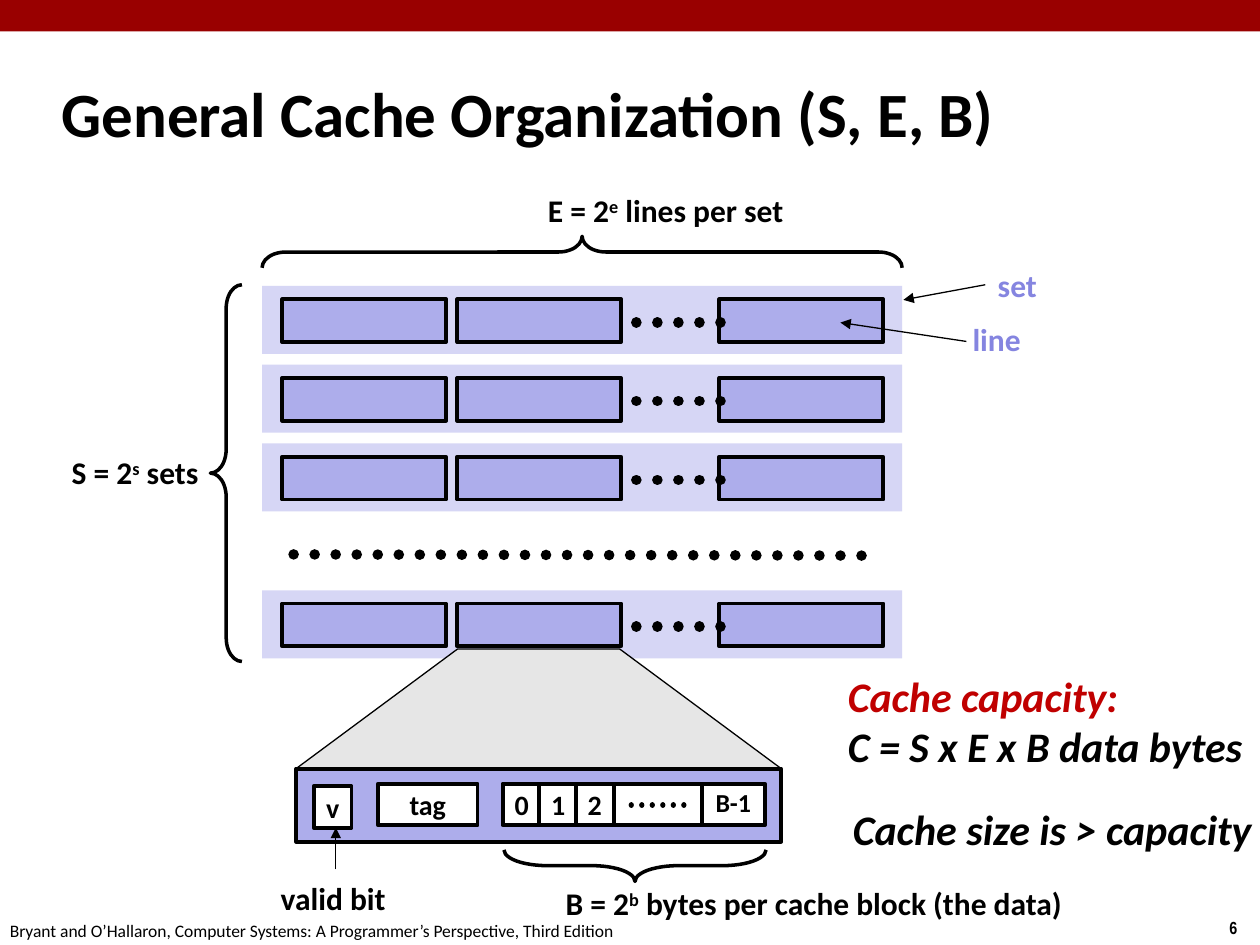
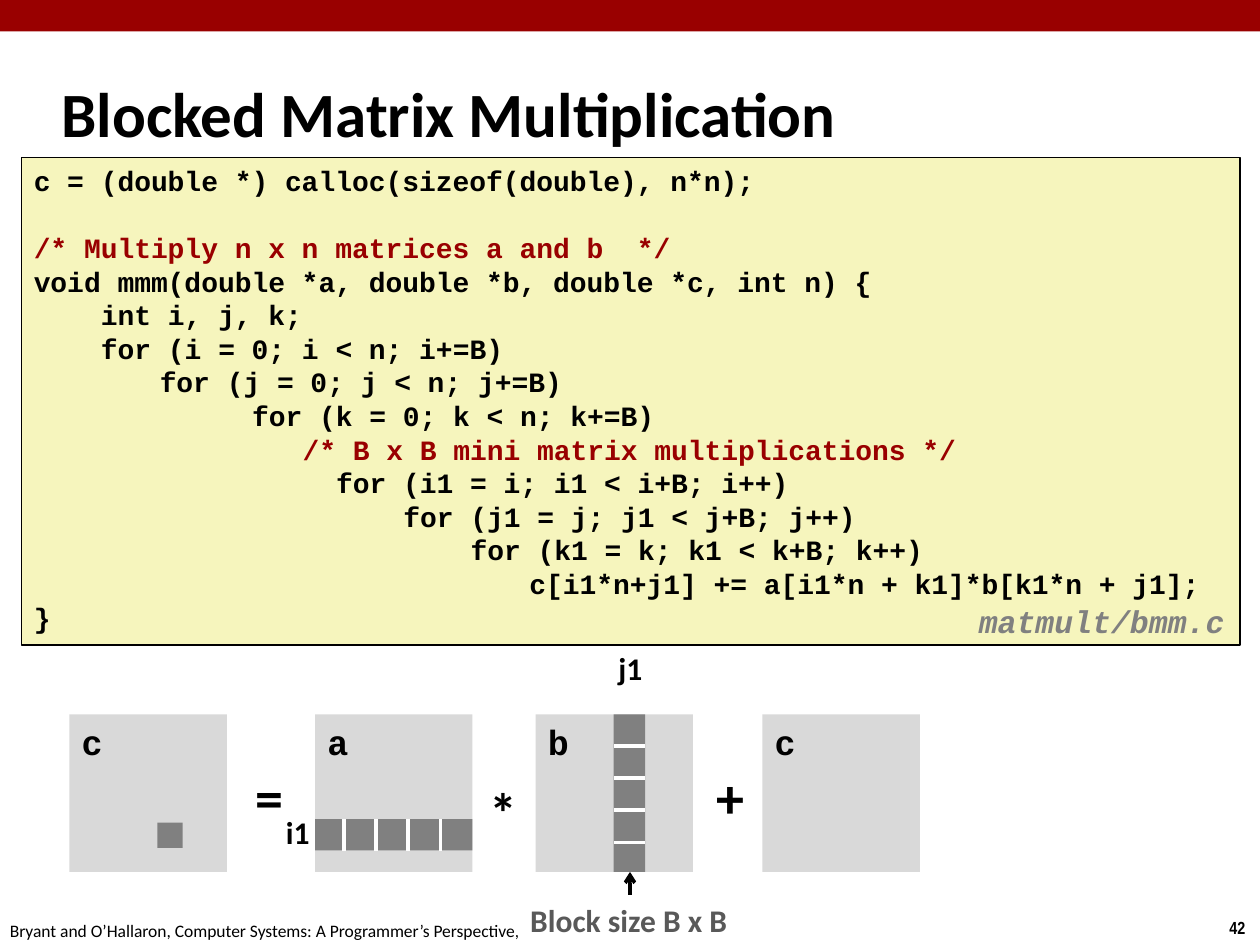
from collections import namedtuple

from lxml.etree import SubElement
from pptx import Presentation
from pptx.dml.color import RGBColor
from pptx.enum.dml import MSO_LINE
from pptx.enum.shapes import MSO_CONNECTOR, MSO_SHAPE
from pptx.enum.text import MSO_ANCHOR, MSO_AUTO_SIZE, PP_ALIGN
from pptx.oxml.ns import qn
from pptx.util import Inches, Pt

COLS, ROWS = 100, 75
WIDE, HIGH = Inches(10), Inches(7.5)
COL, ROW = WIDE // COLS, HIGH // ROWS
BODY, MONO, THIN = "Calibri", "Courier New", "Arial Narrow"
FOOT = ("Bryant and O’Hallaron, Computer Systems: "
        "A Programmer’s Perspective, Third Edition")
INK = {
    "black": "000000", "white": "FFFFFF", "band": "990000", "red": "C00000",
    "set": "D6D6F5", "line": "ADADEB", "name": "8585E0", "zoom": "E6E6E6",
    "code": "F6F5BD", "pale": "D9D9D9", "gray": "808080", "note": "595959",
}
CHAR = 4 / 3  # columns per character of 16 point code
CODE = [  # indent in characters, text, colour
    (0, "c = (double *) calloc(sizeof(double), n*n);", "black"),
    (0, "/* Multiply n x n matrices a and b  */", "band"),
    (0, "void mmm(double *a, double *b, double *c, int n) {", "black"),
    (4, "int i, j, k;", "black"),
    (4, "for (i = 0; i < n; i+=B)", "black"),
    (7.5, "for (j = 0; j < n; j+=B)", "black"),
    (13, "for (k = 0; k < n; k+=B)", "black"),
    (16, "/* B x B mini matrix multiplications */", "band"),
    (18, "for (i1 = i; i1 < i+B; i++)", "black"),
    (22, "for (j1 = j; j1 < j+B; j++)", "black"),
    (26, "for (k1 = k; k1 < k+B; k++)", "black"),
    (29.5, "c[i1*n+j1] += a[i1*n + k1]*b[k1*n + j1];", "black"),
    (0, "}", "black"),
]


class Box(namedtuple("Box", "x y w h")):
    """A region in grid columns and rows."""

    def area(self, x, y, w, h):
        """Give a box placed from this one's top left corner."""
        return Box(self.x + x, self.y + y, w, h)

    def emu(self):
        return (round(self.x * COL), round(self.y * ROW),
                round(self.w * COL), round(self.h * ROW))


PAGE = Box(0, 0, COLS, ROWS)


def ink(name):
    return RGBColor.from_string(INK[name])


def write(frame, text, size, color="black", face=BODY, bold=True, slant=False):
    """Fill a frame; a caret opens and closes a superscript."""
    for i, line in enumerate(text.split("\n")):
        para = frame.paragraphs[0] if i == 0 else frame.add_paragraph()
        font = para.font
        font.name, font.size = face, Pt(size)
        font.bold, font.italic = bold, slant
        font.color.rgb = ink(color)
        for k, piece in enumerate(line.split("^")):
            run = para.add_run()
            run.text = piece
            if k % 2:
                run.font._element.set("baseline", "30000")


def label(slide, box, text, size=18, color="black", fill=None, **style):
    """Add a text box that grows with its unwrapped text."""
    shape = slide.shapes.add_textbox(*box.emu())
    if fill:
        shape.fill.solid()
        shape.fill.fore_color.rgb = ink(fill)
    frame = shape.text_frame
    frame.word_wrap = False
    frame.auto_size = MSO_AUTO_SIZE.SHAPE_TO_FIT_TEXT
    write(frame, text, size, color, **style)
    return frame


def block(slide, box, fill=None, edge=0, kind=MSO_SHAPE.RECTANGLE):
    shape = slide.shapes.add_shape(kind, *box.emu())
    shape.shadow.inherit = False
    if fill:
        shape.fill.solid()
        shape.fill.fore_color.rgb = ink(fill)
    else:
        shape.fill.background()
    if edge:
        shape.line.color.rgb = ink("black")
        shape.line.width = Pt(edge)
    else:
        shape.line.fill.background()
    return shape


def cell(slide, box, text, size=16):
    """Add a white field with centred text."""
    frame = block(slide, box, "white", 2.25).text_frame
    frame.word_wrap = False
    frame.vertical_anchor = MSO_ANCHOR.MIDDLE
    write(frame, text, size)
    frame.paragraphs[0].alignment = PP_ALIGN.CENTER
    return frame


def brace(slide, box, turn=0, bend=0.75):
    """Add a brace that fills the box after its turn."""
    if turn:
        x, y, w, h = box
        box = Box(x + (w - h) / 2, y + (h - w) / 2, h, w)
    shape = block(slide, box, None, 2, MSO_SHAPE.LEFT_BRACE)
    shape.adjustments[0] = bend
    shape.rotation = turn


def rule(slide, start, end, width, color="black", dots=False, tip=None):
    """Add a line, dotted or with an arrowhead at its end if asked."""
    (x1, y1), (x2, y2) = start, end
    ends = [round(n) for n in (x1 * COL, y1 * ROW, x2 * COL, y2 * ROW)]
    wire = slide.shapes.add_connector(MSO_CONNECTOR.STRAIGHT, *ends)
    wire.line.color.rgb = ink(color)
    wire.line.width = Pt(width)
    props = wire._element.spPr
    stroke = props.find(qn("a:ln"))
    if dots:
        wire.line.dash_style = MSO_LINE.ROUND_DOT
        stroke.set("cap", "rnd")
    if tip:
        SubElement(stroke, qn("a:tailEnd"), type=tip)
    SubElement(props, qn("a:effectLst"))


def base(deck, title, page):
    """Start a slide with its band, footer, number and title."""
    slide = deck.slides.add_slide(deck.slide_layouts[6])
    block(slide, PAGE.area(0, 0, COLS, 2.5), "band")
    label(slide, PAGE.area(96.6, 72.3, 3.4, 2.7), page, 10, face=THIN)
    label(slide, PAGE.area(-0.2, 72.5, 50.8, 2.7), FOOT, 10, bold=False)
    head = slide.shapes.add_textbox(*PAGE.area(3.9, 4.8, 83, 8.3).emu())
    head.text_frame.word_wrap = True
    head.text_frame.vertical_anchor = MSO_ANCHOR.MIDDLE
    write(head.text_frame, title, 36)
    return slide


def row(slide, box):
    """Draw one set with its first, second and last line."""
    block(slide, box, "set")
    for x in (1.6, 15.5, 36.3):
        block(slide, box.area(x, 1.05, 13, 3.4), "line", 2.25)
    mid = box.y + 2.88
    rule(slide, (box.x + 29.7, mid), (box.x + 36.4, mid), 6, dots=True)


def sets(slide, box):
    """Draw the stack of sets with braces and names."""
    x, y = box.x, box.y
    brace(slide, box.area(0, -3.95, box.w, 2.5), 90)
    for top in (0, 6.25, 12.5, 24.15):
        row(slide, box.area(0, top, box.w, 5.4))
    rule(slide, (x + 2.5, y + 21.3), (x + 49.2, y + 21.4), 6, dots=True)
    brace(slide, box.area(-4.1, -0.1, 2.5, 29.9))
    label(slide, box.area(21.7, -8, 21.4, 4), "E = 2^e^ lines per set")
    label(slide, box.area(-16.1, 12.8, 12.3, 4), "S = 2^s^ sets")
    label(slide, box.area(57.4, -2.1, 5.1, 4), "set", color="name")
    label(slide, box.area(55.4, 2.2, 5.9, 4), "line", color="name")
    for start, end in (((57.4, -0.1), (50.9, 1.1)), ((55.9, 4.4), (45.9, 2.9))):
        rule(slide, (x + start[0], y + start[1]), (x + end[0], y + end[1]),
             0.75, tip="triangle")


def detail(slide, box):
    """Draw one line enlarged: valid bit, tag and bytes."""
    zoom = block(slide, box.area(0, -9.5, box.w, 9.5), "zoom", 0.75,
                 MSO_SHAPE.TRAPEZOID)
    zoom.adjustments[0] = 1.35
    block(slide, box, "line", 2.25)
    for i in range(3):
        cell(slide, box.area(16.4 + 2.9 * i, 1.2, 3, 3.3), str(i))
    last = cell(slide, box.area(32.2, 1.2, 5, 3.3), "B-1", 14.8)
    last.paragraphs[0].line_spacing = 0.9
    block(slide, box.area(25.2, 1.2, 7, 3.3), "white", 2.25)
    mid = box.y + 2.9
    rule(slide, (box.x + 26.6, mid), (box.x + 31.6, mid), 3, dots=True)
    cell(slide, box.area(6.5, 1.2, 7.9, 3.3), "tag")
    cell(slide, box.area(1.4, 1.4, 3, 3.3), "v")
    brace(slide, box.area(16.5, 6.45, 20.8, 2.5), 270, 1.37)
    label(slide, box.area(20.4, 8.7, 42.9, 4),
          "B = 2^b^ bytes per cache block (the data)")
    label(slide, box.area(-2.2, 8.3, 10.4, 4), "valid bit")
    rule(slide, (box.x + 3.15, box.y + 8), (box.x + 3.15, box.y + 4.7),
         0.75, tip="triangle")


def size(slide, box):
    """State the cache capacity."""
    top = label(slide, box.area(0, 0, 34.5, 9.1),
                "Cache capacity:\nC = S x E x B data bytes", 24, slant=True)
    top.paragraphs[0].font.color.rgb = ink("red")
    label(slide, box.area(0.4, 10.6, 34.9, 5), "Cache size is > capacity", 24,
          slant=True)


def code(slide, box):
    """Show the listing, indented by paragraph."""
    frame = block(slide, box, "code", 1).text_frame
    frame.word_wrap = True
    frame.vertical_anchor = MSO_ANCHOR.TOP
    write(frame, "\n".join(text for _, text, _ in CODE), 16, face=MONO)
    for para, (indent, _, color) in zip(frame.paragraphs, CODE):
        para.alignment = PP_ALIGN.LEFT
        para.font.color.rgb = ink(color)
        props = para._p.get_or_add_pPr()
        props.set("marL", str(round(indent * CHAR * COL)))
        props.set("indent", "0")
    frame.paragraphs[1].space_before = Pt(19.1)


def stamp(slide, box):
    """Put the file name in its corner of the listing."""
    frame = label(slide, box, "matmult/bmm.c", color="gray", face=MONO,
                  slant=True)
    frame.word_wrap = True
    frame.paragraphs[0].line_spacing = 0.94


def matrix(slide, box, name):
    frame = block(slide, box, "pale").text_frame
    frame.vertical_anchor = MSO_ANCHOR.TOP
    write(frame, name, 20, face=MONO)
    frame.paragraphs[0].alignment = PP_ALIGN.LEFT


def strip(slide, box, first):
    """Draw a strip of five mini blocks along the longer side."""
    block(slide, box, "gray")
    x, y, w, h = box
    for i in range(4):
        cut = first + 2.55 * i
        if w > h:
            ends = (x + cut, y), (x + cut, y + h)
        else:
            ends = (x + w, y + cut), (x, y + cut)
        rule(slide, *ends, 2, "white")


def product(slide, box):
    """Draw c = a * b + c with the blocks in use."""
    side = box.h
    for x, name in ((0, "c"), (19.5, "a"), (37, "b"), (55, "c")):
        matrix(slide, box.area(x, 0, side, side), name)
    for x, y, sign in ((13.8, 3.3, "="), (32.4, 4.5, "*"), (50.4, 3.3, "+")):
        label(slide, box.area(x, y, 4.3, 6.4), sign, 32)
    label(slide, box.area(16.2, 7.3, 3.9, 4), "i1")
    label(slide, box.area(42.6, -5.7, 3.9, 4), "j1")
    block(slide, box.area(7, 8.6, 2, 2), "gray")
    strip(slide, box.area(19.5, 8.3, side, 2.5), 2.3)
    strip(slide, box.area(43.2, 0, 2.5, side), 2.5)
    label(slide, box.area(35.6, 14.3, 17.8, 4), "Block size B x B",
          color="note", fill="white")
    mid = box.x + 44.5
    rule(slide, (mid, box.y + 14.3), (mid, box.y + side), 2, tip="arrow")


def main():
    deck = Presentation()
    deck.slide_width, deck.slide_height = WIDE, HIGH

    cache = base(deck, "General Cache Organization (S, E, B)", "6")
    sets(cache, PAGE.area(20.8, 22.7, 50.8, 29.5))
    detail(cache, PAGE.area(23.5, 61, 38.5, 5.8))
    size(cache, PAGE.area(66.3, 52.7, 35, 16))

    mult = base(deck, "Blocked Matrix Multiplication", "42")
    code(mult, PAGE.area(1.7, 12.5, 96.7, 38.7))
    product(mult, PAGE.area(5.5, 56.7, 67.5, 12.5))
    stamp(mult, PAGE.area(76.7, 47.5, 22.3, 3.9))
    deck.save("out.pptx")


if __name__ == "__main__":
    main()
